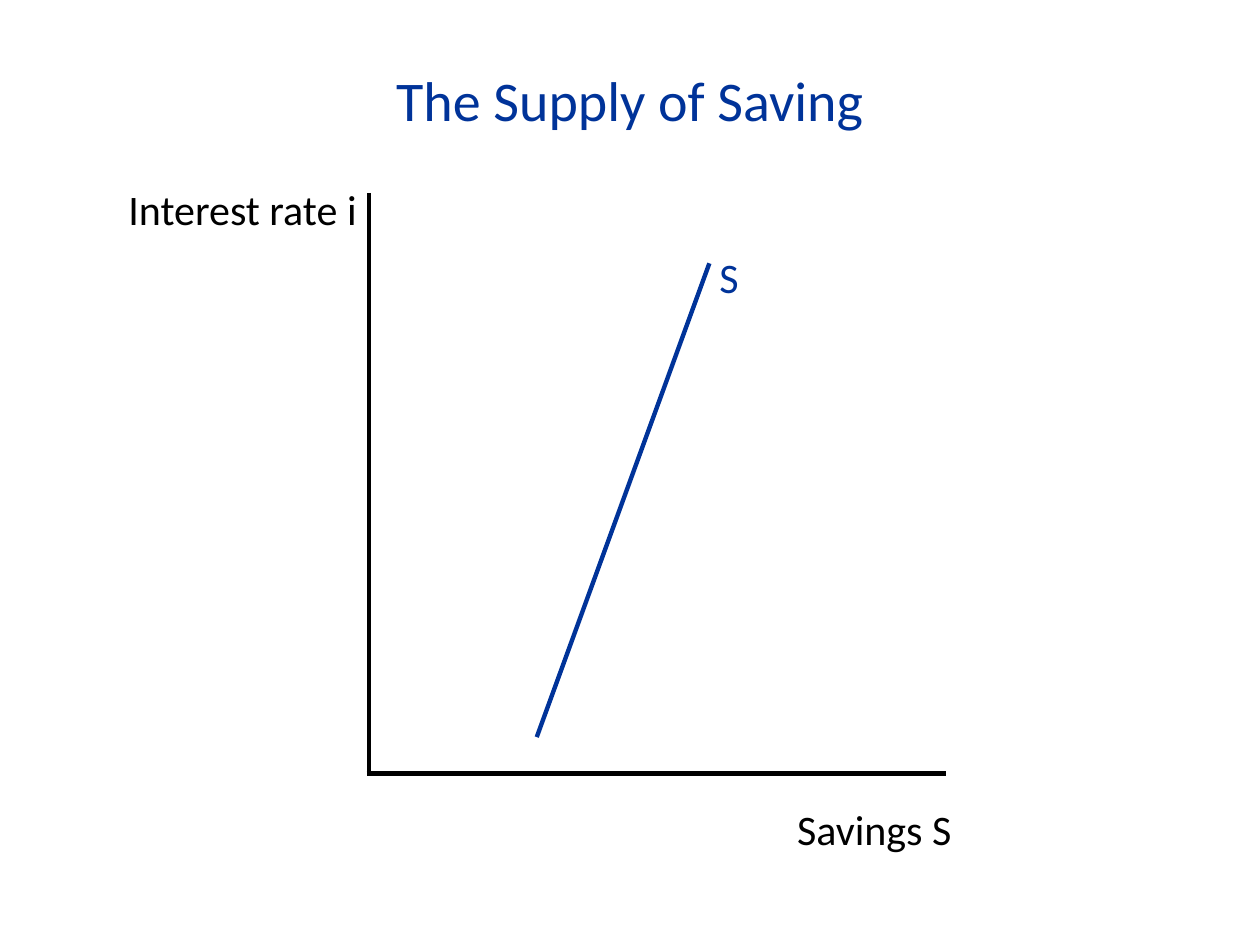
from lxml import etree
from pptx import Presentation
from pptx import util as u
from pptx.dml.color import RGBColor
from pptx.enum import shapes, text
from pptx.oxml.ns import qn

BLUE = RGBColor(0x00, 0x33, 0x99)
BLACK = RGBColor(0x00, 0x00, 0x00)

prs = Presentation()
prs.slide_width = u.Inches(10)
prs.slide_height = u.Inches(7.5)
s = prs.slides.add_slide(prs.slide_layouts[6])

lines = [
    ((2.91, 6.14, 7.51, 6.14), BLACK),
    ((2.93, 1.53, 2.93, 6.14), BLACK),
    ((4.26, 5.85, 5.63, 2.09), BLUE),
]
for ends, color in lines:
    sp = s.shapes.add_connector(
        shapes.MSO_CONNECTOR.STRAIGHT, *[u.Inches(v) for v in ends])
    sp.line.color.rgb = color
    sp.line.width = u.Pt(2.5)
    etree.SubElement(sp._element.spPr, qn("a:effectLst"))

MIDDLE, TOP = text.MSO_ANCHOR.MIDDLE, text.MSO_ANCHOR.TOP
CENTER, RIGHT = text.PP_ALIGN.CENTER, text.PP_ALIGN.RIGHT
labels = [
    ("The Supply of Saving", (0.7, 0.47, 8.6, 0.64), 32, BLUE, CENTER, MIDDLE),
    ("Interest rate i", (-0.83, 1.41, 3.76, 0.5), 24, BLACK, RIGHT, TOP),
    ("Savings S", (5.67, 6.33, 1.98, 0.5), 24, BLACK, RIGHT, TOP),
    ("S", (5.38, 1.95, 0.58, 0.5), 24, BLUE, RIGHT, TOP),
]
for words, box, size, color, align, anchor in labels:
    sp = s.shapes.add_textbox(*[u.Inches(v) for v in box])
    tf = sp.text_frame
    frame = {"word_wrap": True, "vertical_anchor": anchor,
             "auto_size": text.MSO_AUTO_SIZE.SHAPE_TO_FIT_TEXT}
    for name, value in frame.items():
        setattr(tf, name, value)
    p = tf.paragraphs[0]
    p.alignment = align
    r = p.add_run()
    r.text = words
    for name, value in {"name": "Calibri", "size": u.Pt(size)}.items():
        setattr(r.font, name, value)
    r.font.color.rgb = color

prs.save("out.pptx")
